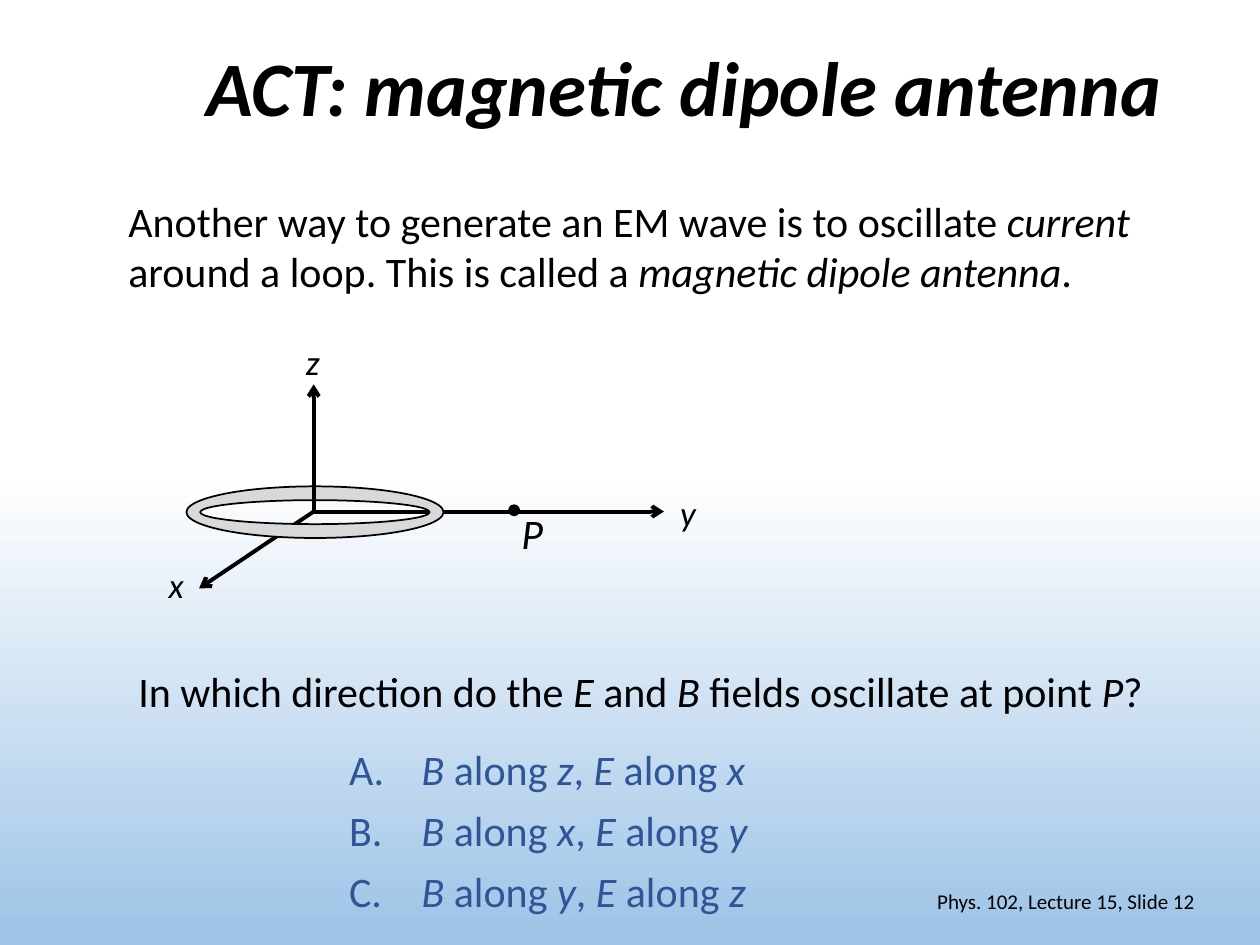
import dataclasses

import lxml.etree
import pptx
import pptx.dml.color
import pptx.enum.dml
import pptx.enum.shapes
import pptx.enum.text
import pptx.oxml.ns
import pptx.util

Inches = pptx.util.Inches
Pt = pptx.util.Pt
ALIGN = pptx.enum.text.PP_ALIGN
ANCHOR = pptx.enum.text.MSO_ANCHOR
SHAPE = pptx.enum.shapes.MSO_SHAPE
BLACK = "000000"
ORIGIN = (2.49, 4.06)


@dataclasses.dataclass
class Label:
    """Text box whose text marks italics with asterisks."""
    text: str
    x: float
    y: float
    w: float
    h: float
    size: int = 24
    align: ALIGN = ALIGN.LEFT
    anchor: ANCHOR = ANCHOR.TOP


@dataclasses.dataclass
class Solid:
    """Filled and outlined preset shape."""
    kind: SHAPE
    x: float
    y: float
    w: float
    h: float
    fill: str


LABELS = [
    Label("Another way to generate an EM wave is to oscillate *current* around a loop. "
          "This is called a *magnetic dipole antenna*.", 0.92, 1.5, 8.17, 0.91),
    Label("In which direction do the *E* and *B* fields oscillate at point *P*?",
          1, 5.23, 8.17, 0.5),
    Label("*x*", 1.24, 4.42, 0.33, 0.44, 20),
    Label("*y*", 5.3, 3.85, 0.33, 0.44, 20),
    Label("*z*", 2.33, 2.65, 0.27, 0.44, 20),
    Label("*P*", 4.04, 3.98, 0.33, 0.5),
    Label("Phys. 102, Lecture 15, Slide 12", 7.06, 6.95, 2.52, 0.4, 12,
          ALIGN.RIGHT, ANCHOR.MIDDLE),
]
ANSWERS = ["zx", "xy", "yz"]


def rgb(value: str) -> pptx.dml.color.RGBColor:
    """Convert a hex string to a colour."""
    return pptx.dml.color.RGBColor.from_string(value)


def sub(parent, tag: str, **attrs: str):
    """Append a drawing element to a parent."""
    return lxml.etree.SubElement(parent, pptx.oxml.ns.qn(tag), attrs)


def place(sp, x: float, y: float, w: float, h: float) -> None:
    """Move and size a shape in inches."""
    sp.left, sp.top, sp.width, sp.height = map(Inches, (x, y, w, h))


def write(p, text: str, size: int, color: str = BLACK) -> None:
    """Fill a paragraph, with asterisks toggling italics."""
    p.font.name, p.font.size = "Calibri", Pt(size)
    p.font.color.rgb = rgb(color)
    for i, part in enumerate(text.split("*")):
        if part:
            r = p.add_run()
            r.text = part
            r.font.italic = i % 2 == 1


def add_label(s, label: Label) -> None:
    """Draw a text box."""
    sp = s.shapes.add_textbox(*map(Inches, (label.x, label.y, label.w, label.h)))
    tf = sp.text_frame
    tf.word_wrap, tf.vertical_anchor = True, label.anchor
    p = tf.paragraphs[0]
    p.alignment = label.align
    write(p, label.text, label.size)


def add_axis(s, x: float, y: float) -> None:
    """Draw an arrow from the origin to a point."""
    line = s.shapes.add_connector(pptx.enum.shapes.MSO_CONNECTOR.STRAIGHT,
                                  *map(Inches, (*ORIGIN, x, y)))
    line.line.color.rgb = rgb(BLACK)
    line.line.width = Pt(2.25)
    sub(line.line._get_or_add_ln(), "a:tailEnd", type="arrow")
    sub(line._element.spPr, "a:effectLst")


def add_solid(s, solid: Solid):
    """Draw a preset shape with a thin black outline."""
    sp = s.shapes.add_shape(solid.kind, *map(Inches, (solid.x, solid.y, solid.w, solid.h)))
    sp.shadow.inherit = False
    sp.fill.solid()
    sp.fill.fore_color.rgb = rgb(solid.fill)
    sp.line.color.rgb = rgb(BLACK)
    sp.line.width = Pt(1)
    return sp


def set_background(s) -> None:
    """Fade the background from white to blue in its lower half."""
    fill = s.background.fill
    fill.gradient()
    fill.gradient_angle = 270
    for stop, position, color in zip(fill.gradient_stops, (0.5, 1), ("FFFFFF", "9DC3E6")):
        stop.position = position
        stop.color.rgb = rgb(color)


def fill_title(sp) -> None:
    """Place and write the title."""
    place(sp, 1.12, 0, 8.62, 1.45)
    tf = sp.text_frame
    tf.auto_size = pptx.enum.text.MSO_AUTO_SIZE.NONE
    tf.vertical_anchor = ANCHOR.MIDDLE
    p = tf.paragraphs[0]
    p.alignment, p.line_spacing, p.font.bold = ALIGN.CENTER, 0.9, True
    write(p, "*ACT: magnetic dipole antenna*", 44)


def fill_answers(sp) -> None:
    """Place and write the lettered answers."""
    place(sp, 2.67, 5.85, 3.46, 1.48)
    tf = sp.text_frame
    tf.auto_size = pptx.enum.text.MSO_AUTO_SIZE.NONE
    tf.word_wrap = False
    for i, (b, e) in enumerate(ANSWERS):
        p = tf.add_paragraph() if i else tf.paragraphs[0]
        p.space_before, p.space_after = Pt(0), Pt(6)
        pPr = p._p.get_or_add_pPr()
        pPr.set("marL", str(Inches(0.5)))
        pPr.set("indent", str(Inches(-0.5)))
        sub(pPr, "a:buFont", typeface="+mj-lt")
        sub(pPr, "a:buAutoNum", type="alphaUcPeriod")
        write(p, f" *B* along *{b}*, *E* along *{e}*", 24, "2F5597")


def main() -> None:
    """Build the slide."""
    prs = pptx.Presentation()
    prs.slide_width, prs.slide_height = Inches(10), Inches(7.5)
    s = prs.slides.add_slide(prs.slide_layouts[1])
    set_background(s)
    fill_title(s.shapes.title)
    fill_answers(s.placeholders[1])
    add_axis(s, 1.58, 4.67)
    add_axis(s, 5.27, ORIGIN[1])
    loop = add_solid(s, Solid(SHAPE.DONUT, 1.48, 3.86, 2.04, 0.41, "D9D9D9"))
    loop.adjustments[0] = 0.268
    add_axis(s, ORIGIN[0], 3.05)
    for label in LABELS:
        add_label(s, label)
    add_solid(s, Solid(SHAPE.OVAL, 4.04, 4.01, 0.08, 0.08, BLACK))
    prs.save("out.pptx")


if __name__ == "__main__":
    main()
